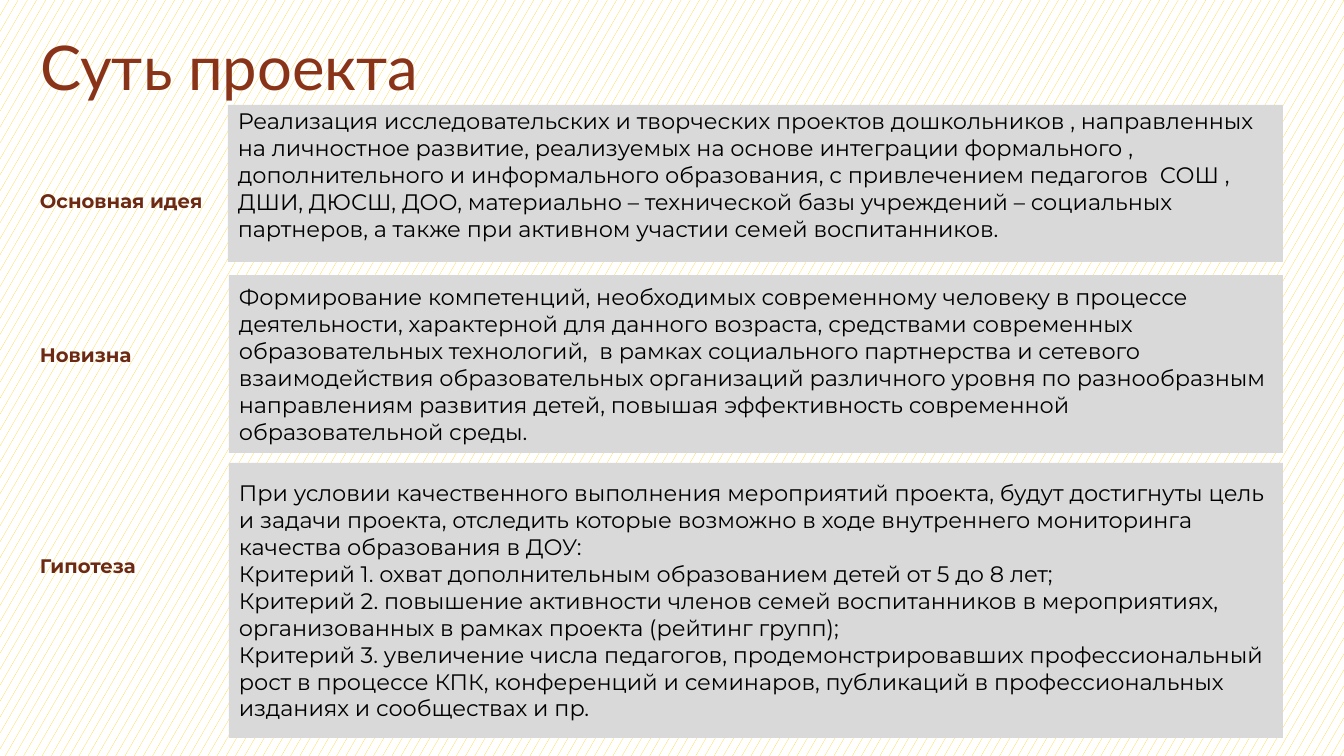
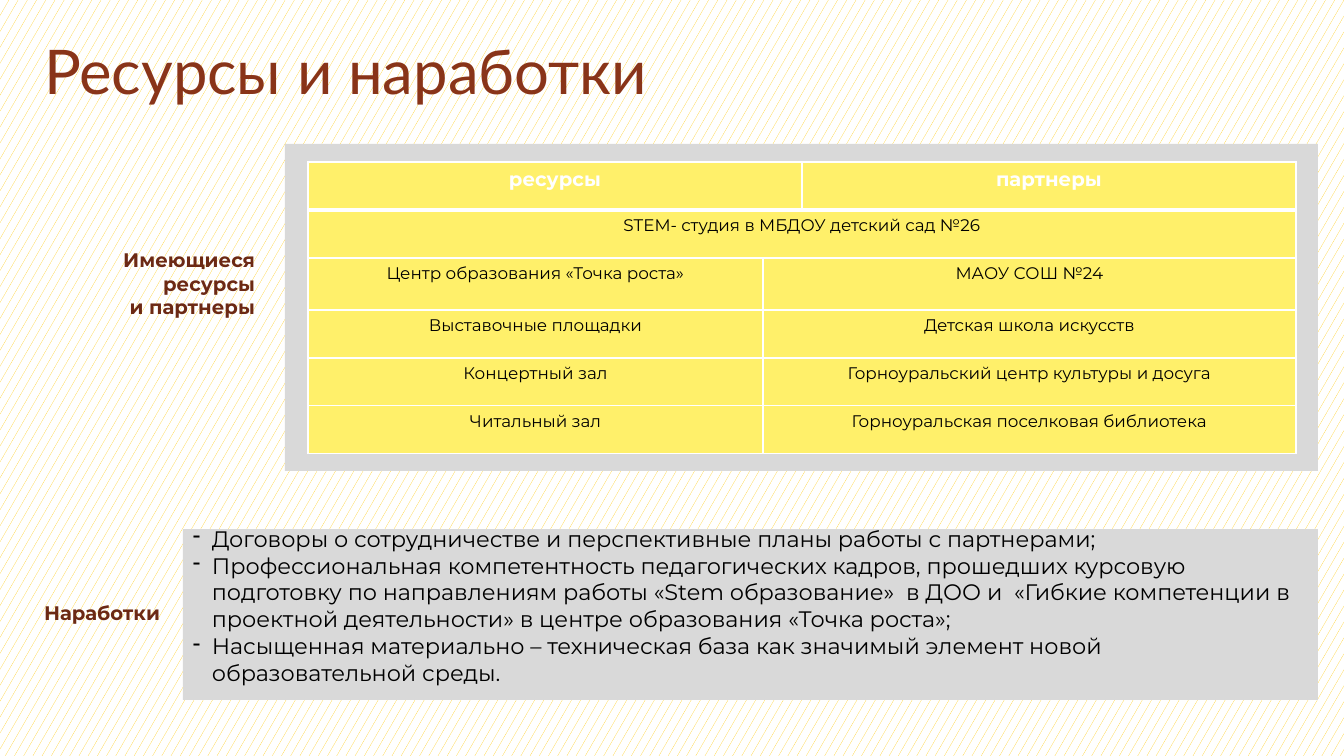
from dataclasses import dataclass

from lxml import etree
from pptx import Presentation
from pptx.dml.color import RGBColor
from pptx.enum.dml import MSO_PATTERN
from pptx.enum.shapes import MSO_SHAPE
from pptx.enum.text import MSO_ANCHOR, MSO_AUTO_SIZE, PP_ALIGN
from pptx.oxml.ns import qn
from pptx.util import Emu, Pt

EMU_PER_PX = 12192000 / 1344
LEFT, CENTER, RIGHT = PP_ALIGN.LEFT, PP_ALIGN.CENTER, PP_ALIGN.RIGHT
TOP, MIDDLE = MSO_ANCHOR.TOP, MSO_ANCHOR.MIDDLE
RECTANGLE = MSO_SHAPE.RECTANGLE
CONFETTI = MSO_PATTERN.SMALL_CONFETTI
NO_AUTOFIT = MSO_AUTO_SIZE.NONE
TITLE_ONLY = 5
TITLE_FONT, BODY_FONT = "Lato", "Montserrat"
COLORS = {
    "title": "893419",
    "label": "6C2914",
    "text": "000000",
    "panel": "D9D9D9",
    "cell": "FFF06A",
    "white": "FFFFFF",
    "pattern": "FFCA08",
}


@dataclass
class Area:
    left: int
    top: int
    width: int
    height: int


@dataclass
class Label:
    area: Area
    text: str
    align: PP_ALIGN = LEFT


@dataclass
class Panel:
    area: Area
    lines: tuple[str, ...] = ()
    bottom_inset: int = 5
    dashed: bool = False


IDEA_ROWS = (
    (
        Label(Area(30, 184, 220, 54), "Основная идея"),
        Panel(Area(228, 105, 1055, 157), (
            "Реализация исследовательских и творческих проектов дошкольников , "
            "направленных на личностное развитие, реализуемых на основе интеграции "
            "формального , дополнительного и информального образования, с "
            "привлечением педагогов  СОШ , ДШИ, ДЮСШ, ДОО, материально – "
            "технической базы учреждений – социальных партнеров, а также при "
            "активном участии семей воспитанников.",
        ), bottom_inset=23),
    ),
    (
        Label(Area(30, 338, 262, 54), "Новизна"),
        Panel(Area(229, 275, 1054, 178), (
            "Формирование компетенций, необходимых современному человеку в процессе "
            "деятельности, характерной для данного возраста, средствами современных "
            "образовательных технологий,  в рамках социального партнерства и "
            "сетевого взаимодействия образовательных организаций различного уровня "
            "по разнообразным направлениям развития детей, повышая эффективность "
            "современной образовательной среды.",
        )),
    ),
    (
        Label(Area(30, 549, 264, 76), "Гипотеза"),
        Panel(Area(229, 463, 1054, 275), (
            "При условии качественного выполнения мероприятий проекта, будут "
            "достигнуты цель и задачи проекта, отследить которые возможно в ходе "
            "внутреннего мониторинга качества образования в ДОУ:",
            "Критерий 1. охват дополнительным образованием детей от 5 до 8 лет;",
            "Критерий 2. повышение активности членов семей воспитанников в "
            "мероприятиях, организованных в рамках проекта (рейтинг групп);",
            "Критерий 3. увеличение числа педагогов, продемонстрировавших "
            "профессиональный рост в процессе КПК, конференций и семинаров, "
            "публикаций в профессиональных изданиях и сообществах и пр.",
        )),
    ),
)

RESOURCE_ROWS = (
    (
        Label(Area(18, 596, 152, 105), "Наработки", RIGHT),
        Panel(Area(183, 529, 1135, 171), (
            "Договоры о сотрудничестве и перспективные планы работы с партнерами;",
            "Профессиональная компетентность педагогических кадров, прошедших "
            "курсовую подготовку по направлениям работы «Stem образование»  в ДОО "
            "и  «Гибкие компетенции в проектной деятельности» в центре образования "
            "«Точка роста»;",
            "Насыщенная материально – техническая база как значимый элемент новой "
            "образовательной среды.",
        ), bottom_inset=23, dashed=True),
    ),
    (
        Label(Area(38, 243, 227, 147), "Имеющиеся ресурсы\vи партнеры", RIGHT),
        Panel(Area(285, 144, 1033, 327)),
    ),
)

TABLE_AREA = Area(308, 162, 988, 292)
COLUMN_WIDTHS = (455, 39, 494)
ROW_HEIGHTS = (48, 48, 52, 48, 48, 48)
# Each cell: starting column, ending column, text
TABLE_ROWS = (
    ((0, 1, "ресурсы"), (2, 2, "партнеры")),
    ((0, 2, "STEM- студия в МБДОУ детский сад №26"),),
    ((0, 0, "Центр образования «Точка роста»"), (1, 2, "МАОУ СОШ №24")),
    ((0, 0, "Выставочные площадки"), (1, 2, "Детская школа искусств")),
    ((0, 0, "Концертный зал"), (1, 2, "Горноуральский центр культуры и досуга")),
    ((0, 0, "Читальный зал"), (1, 2, "Горноуральская поселковая библиотека")),
)


def px(length: int) -> Emu:
    return Emu(round(length * EMU_PER_PX))


def place(area: Area) -> tuple[Emu, Emu, Emu, Emu]:
    return px(area.left), px(area.top), px(area.width), px(area.height)


def color(name: str) -> RGBColor:
    return RGBColor.from_string(COLORS[name])


def style_para(para, size: int, color_name: str, align: PP_ALIGN = LEFT,
               bold: bool = False, font: str = BODY_FONT) -> None:
    para.alignment = align
    for span in para.runs:
        span.font.name = font
        span.font.size = Pt(size)
        span.font.bold = bold
        span.font.color.rgb = color(color_name)


def add_dash(para) -> None:
    properties = para._p.get_or_add_pPr()
    properties.set("marL", str(px(19)))
    properties.set("indent", str(-px(19)))
    etree.SubElement(properties, qn("a:buChar")).set("char", "-")


def add_page(deck, title: str, area: Area):
    page = deck.slides.add_slide(deck.slide_layouts[TITLE_ONLY])
    box = page.shapes.title
    box.left, box.top, box.width, box.height = place(area)
    frame = box.text_frame
    frame.text = title
    frame.auto_size = NO_AUTOFIT
    frame.vertical_anchor = MIDDLE
    para = frame.paragraphs[0]
    para.line_spacing = 0.9
    style_para(para, 44, "title", font=TITLE_FONT)
    return page


def add_label(page, label: Label) -> None:
    frame = page.shapes.add_textbox(*place(label.area)).text_frame
    frame.word_wrap = True
    frame.vertical_anchor = TOP
    frame.text = label.text
    style_para(frame.paragraphs[0], 14, "label", label.align, bold=True)


def add_panel(page, panel: Panel) -> None:
    box = page.shapes.add_shape(RECTANGLE, *place(panel.area))
    box.shadow.inherit = False
    box.fill.solid()
    box.fill.fore_color.rgb = color("panel")
    box.line.fill.background()
    if not panel.lines:
        return
    frame = box.text_frame
    frame.word_wrap = True
    frame.vertical_anchor = MIDDLE
    frame.margin_bottom = px(panel.bottom_inset)
    frame.text = "\n".join(panel.lines)
    for para in frame.paragraphs:
        if panel.dashed:
            add_dash(para)
        style_para(para, 16, "text")


def add_rows(page, rows: tuple[tuple[Label, Panel], ...]) -> None:
    for label, panel in rows:
        add_label(page, label)
        add_panel(page, panel)


def set_borders(cell, widths: dict[str, int]) -> None:
    properties = cell._tc.get_or_add_tcPr()
    for side, width in widths.items():
        line = etree.SubElement(properties, qn(f"a:ln{side}"), w=str(Pt(width)))
        fill = etree.SubElement(line, qn("a:solidFill"))
        etree.SubElement(fill, qn("a:srgbClr"), val=COLORS["white"])


def add_resource_table(page) -> None:
    table = page.shapes.add_table(
        len(ROW_HEIGHTS), len(COLUMN_WIDTHS), *place(TABLE_AREA)).table
    table.horz_banding = False
    for column, width in zip(table.columns, COLUMN_WIDTHS):
        column.width = px(width)
    for row, height in zip(table.rows, ROW_HEIGHTS):
        row.height = px(height)

    # Borders and fills, with a thick rule under the header
    for row_index, row in enumerate(table.rows):
        top = 3 if row_index == 1 else 1
        bottom = 3 if row_index == 0 else 1
        for cell in row.cells:
            set_borders(cell, {"L": 1, "R": 1, "T": top, "B": bottom})
            cell.fill.solid()
            cell.fill.fore_color.rgb = color("cell")

    # Merged spans and text
    for row_index, entries in enumerate(TABLE_ROWS):
        header = row_index == 0
        for first, last, text in entries:
            cell = table.cell(row_index, first)
            if last > first:
                cell.merge(table.cell(row_index, last))
            cell.text_frame.text = text
            style_para(cell.text_frame.paragraphs[0], 14 if header else 12,
                       "white" if header else "text", CENTER, bold=header)


def main() -> None:
    deck = Presentation()
    deck.slide_width, deck.slide_height = px(1344), px(756)

    # Shared patterned background
    backdrop = deck.slide_master.background.fill
    backdrop.patterned()
    backdrop.pattern = CONFETTI
    backdrop.fore_color.rgb = color("pattern")
    backdrop.back_color.rgb = color("white")

    # Project idea
    page = add_page(deck, "Суть проекта", Area(30, 16, 420, 109))
    add_rows(page, IDEA_ROWS)

    # Resources and results
    page = add_page(deck, "Ресурсы и наработки", Area(34, 34, 1226, 82))
    add_rows(page, RESOURCE_ROWS)
    add_resource_table(page)

    deck.save("out.pptx")


if __name__ == "__main__":
    main()
